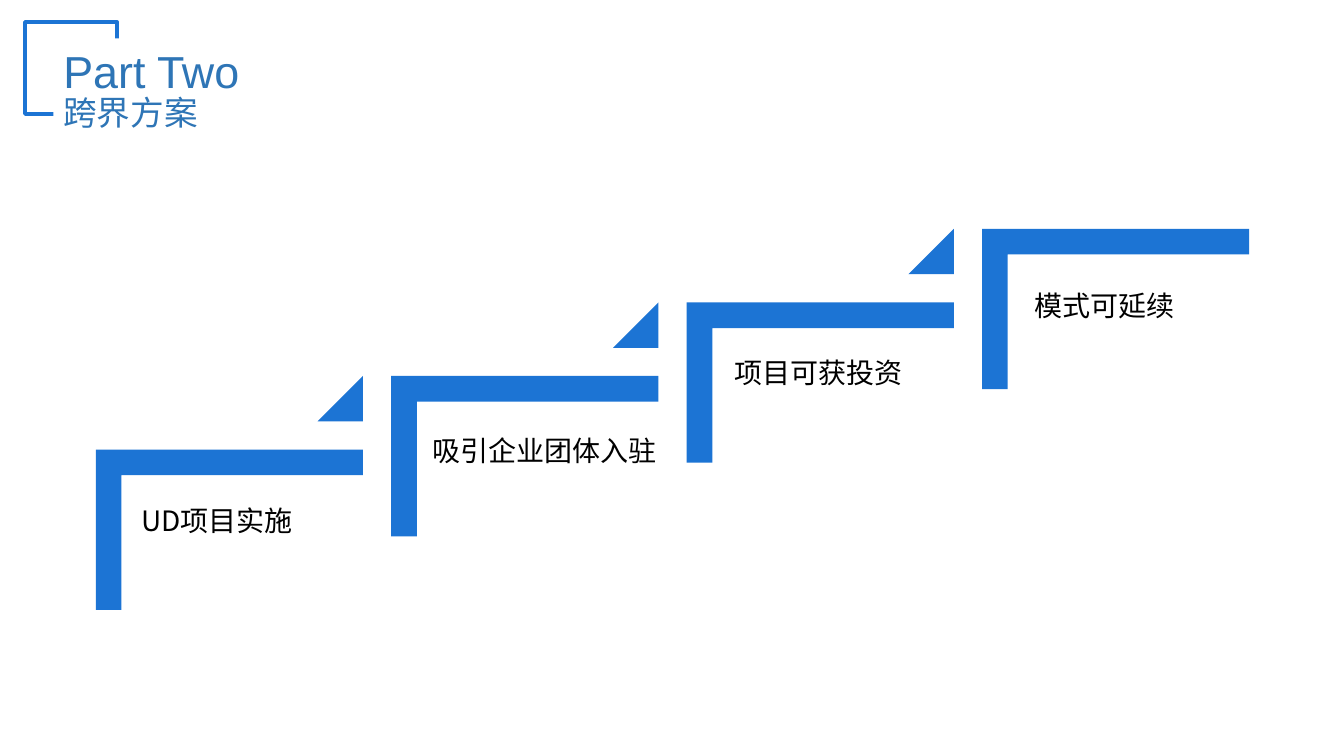
from lxml.etree import SubElement
from pptx import Presentation
from pptx.dml.color import RGBColor
from pptx.enum.shapes import MSO_SHAPE
from pptx.enum.text import MSO_AUTO_SIZE, PP_ALIGN
from pptx.oxml.ns import qn
from pptx.util import Inches, Pt

BLUE, TITLE_BLUE, WHITE, BLACK = "1C74D4", "2E75B6", "FFFFFF", "000000"
CHINESE_FONT = "Noto Sans CJK SC"

deck = Presentation()
deck.slide_width, deck.slide_height = Inches(13.33), Inches(7.5)
page = deck.slides.add_slide(deck.slide_layouts[6])


def add_figure(kind, place, fill, line=None, turn=0, adjust=()):
    figure = page.shapes.add_shape(kind, *map(Inches, place))
    figure.shadow.inherit = False
    figure.rotation = turn
    for index, value in enumerate(adjust):
        figure.adjustments[index] = value
    figure.fill.solid()
    figure.fill.fore_color.rgb = RGBColor.from_string(fill)
    if line:
        figure.line.color.rgb = RGBColor.from_string(line)
        figure.line.width = Pt(3)
    else:
        figure.line.fill.background()


def add_text(text, place, size, color, font=CHINESE_FONT, insets=(0.1, 0.05, 0.1, 0.05),
             wrap=True, grow=False, align=None, spacing=None):
    box = page.shapes.add_textbox(*map(Inches, place))
    frame = box.text_frame
    frame.word_wrap = wrap
    frame.auto_size = MSO_AUTO_SIZE.SHAPE_TO_FIT_TEXT if grow else MSO_AUTO_SIZE.NONE
    frame.margin_left, frame.margin_top, frame.margin_right, frame.margin_bottom = map(Inches, insets)
    para = frame.paragraphs[0]
    para.alignment = align
    para.line_spacing = spacing
    span = para.add_run()
    span.text = text
    span.font.size = Pt(size)
    span.font.name = font
    span.font.color.rgb = RGBColor.from_string(color)
    SubElement(span._r.get_or_add_rPr(), qn("a:ea"), typeface=font)


STEP_RIGHT, STEP_UP = 2.93, 0.73
CORNER_WIDTH, CORNER_HEIGHT, BAR = 1.59, 2.65, 0.16
TRIANGLE = 0.45
steps = [
    ("UD项目实施", 1.2, 4.83, 2.39),
    ("吸引企业团体入驻", 4.09, 4.14, 2.51),
    ("项目可获投资", 7.08, 3.36, 2.39),
    ("模式可延续", 10.06, 2.7, 2.39),
]

for number, (label, label_left, label_top, label_width) in enumerate(steps):
    right, up = number * STEP_RIGHT, number * STEP_UP
    add_figure(MSO_SHAPE.CORNER, (1.48 + right, 3.93 - up, CORNER_WIDTH, CORNER_HEIGHT),
               BLUE, turn=90, adjust=(BAR, BAR))
    add_text(label, (label_left, label_top, label_width, 2.09), 20, BLACK,
             insets=(0.2, 0.2, 0, 0.07), spacing=0.9)
    if number < len(steps) - 1:
        add_figure(MSO_SHAPE.ISOSCELES_TRIANGLE, (3.15 + right, 3.73 - up, TRIANGLE, TRIANGLE),
                   BLUE, adjust=(1,))

add_figure(MSO_SHAPE.RECTANGLE, (0.25, 0.22, 0.91, 0.91), WHITE, line=BLUE)
add_figure(MSO_SHAPE.RECTANGLE, (0.53, 0.38, 0.91, 0.91), WHITE)
add_text("Part Two", (0.53, 0.38, 2, 0.64), 32, TITLE_BLUE, font="Arial", wrap=False, grow=True)
add_text("跨界方案", (0.53, 0.86, 1.9, 0.5), 24, TITLE_BLUE, grow=True, align=PP_ALIGN.JUSTIFY)

deck.save("out.pptx")
